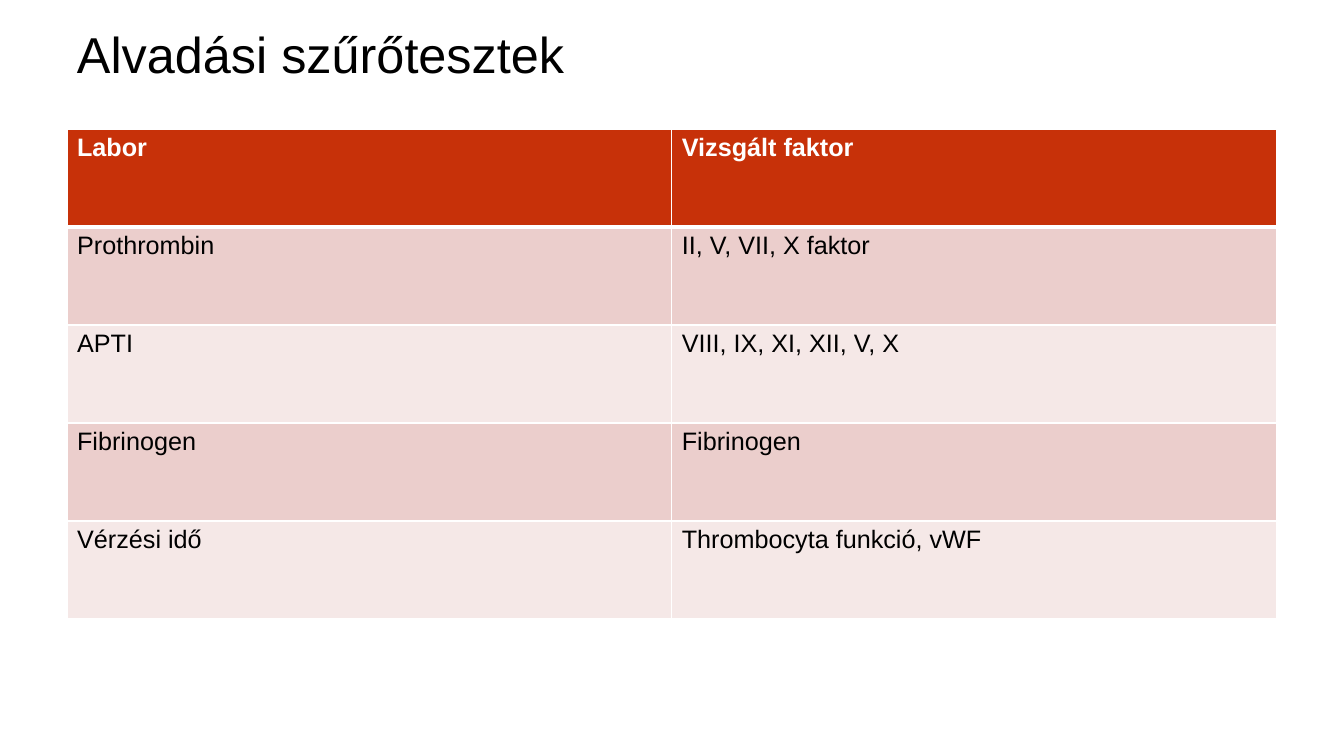
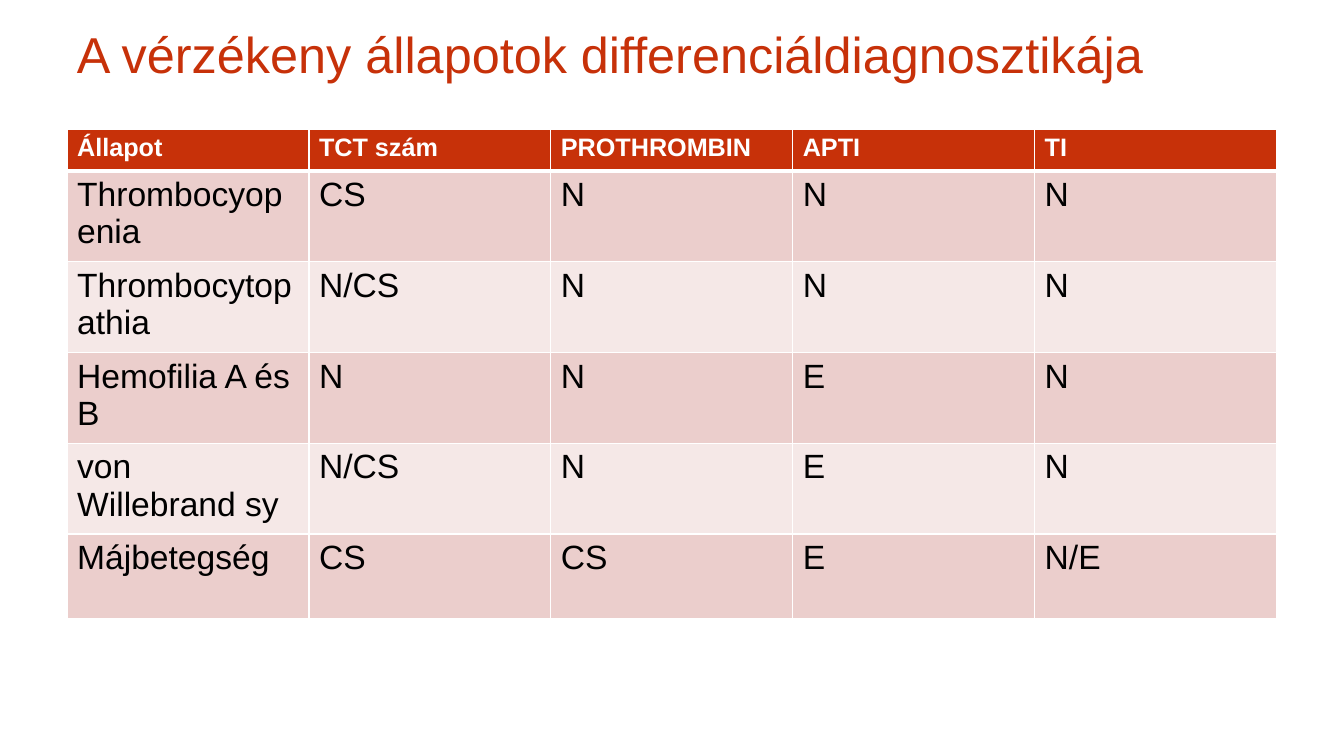
import pptx
import pptx.dml.color
import pptx.enum.text
import pptx.oxml
import pptx.oxml.ns
import pptx.util

Cm = pptx.util.Cm
Pt = pptx.util.Pt

COLORS = {
    "accent": "C73109",
    "text": "000000",
    "white": "FFFFFF",
    "band_dark": "EBCECC",
    "band_light": "F5E8E7",
}


class Deck:
    FONT = "Arial"
    LEFT, WIDTH = 1.69, 30.48
    TITLE_TOP, TITLE_HEIGHT = 0.53, 1.63
    TABLE_TOP = 3.25

    def __init__(self):
        self.prs = pptx.Presentation()
        self.prs.slide_width = Cm(33.87)
        self.prs.slide_height = Cm(19.05)
        self.s = None

    def rgb(self, color):
        return pptx.dml.color.RGBColor.from_string(COLORS[color])

    def set_text(self, tf, text, size, color, bold=False):
        tf.text = text
        for r in tf.paragraphs[0].runs:
            r.font.name = self.FONT
            r.font.size = Pt(size)
            r.font.bold = bold
            r.font.color.rgb = self.rgb(color)

    def slide(self, title, color):
        self.s = self.prs.slides.add_slide(self.prs.slide_layouts[6])
        sp = self.s.shapes.add_textbox(
            Cm(self.LEFT), Cm(self.TITLE_TOP), Cm(self.WIDTH), Cm(self.TITLE_HEIGHT))
        tf = sp.text_frame
        tf.word_wrap = True
        tf.vertical_anchor = pptx.enum.text.MSO_ANCHOR.MIDDLE
        self.set_text(tf, title, 36, color)

    def borders(self, cell, top, bottom):
        tc_pr = cell._tc.get_or_add_tcPr()
        for side, width in (("L", 1), ("R", 1), ("T", top), ("B", bottom)):
            tc_pr.append(pptx.oxml.parse_xml(
                f'<a:ln{side} {pptx.oxml.ns.nsdecls("a")} w="{Pt(width)}">'
                f'<a:solidFill><a:srgbClr val="{COLORS["white"]}"/></a:solidFill>'
                f'</a:ln{side}>'))

    def table(self, rows, header_height, row_height, body_size):
        heights = [header_height] + [row_height] * (len(rows) - 1)
        table = self.s.shapes.add_table(
            len(rows), len(rows[0]), Cm(self.LEFT), Cm(self.TABLE_TOP),
            Cm(self.WIDTH), Cm(sum(heights))).table
        for column in table.columns:
            column.width = Cm(self.WIDTH / len(rows[0]))
        for i, (values, height) in enumerate(zip(rows, heights)):
            table.rows[i].height = Cm(height)
            header = i == 0
            band = "band_dark" if i % 2 else "band_light"
            for j, text in enumerate(values):
                cell = table.cell(i, j)
                self.borders(cell, 3 if i == 1 else 1, 3 if header else 1)
                cell.fill.solid()
                cell.fill.fore_color.rgb = self.rgb("accent" if header else band)
                self.set_text(cell.text_frame, text, 18 if header else body_size,
                              "white" if header else "text", header)


def main():
    deck = Deck()

    deck.slide("Alvadási szűrőtesztek", "text")
    deck.table([
        ("Labor", "Vizsgált faktor"),
        ("Prothrombin", "II, V, VII, X faktor"),
        ("APTI", "VIII, IX, XI, XII, V, X"),
        ("Fibrinogen", "Fibrinogen"),
        ("Vérzési idő", "Thrombocyta funkció, vWF"),
    ], header_height=2.47, row_height=2.47, body_size=18)

    deck.slide("A vérzékeny állapotok differenciáldiagnosztikája", "accent")
    deck.table([
        ("Állapot", "TCT szám", "PROTHROMBIN", "APTI", "TI"),
        ("Thrombocyopenia", "CS", "N", "N", "N"),
        ("Thrombocytopathia", "N/CS", "N", "N", "N"),
        ("Hemofilia A és B", "N", "N", "E", "N"),
        ("von Willebrand sy", "N/CS", "N", "E", "N"),
        ("Májbetegség", "CS", "CS", "E", "N/E"),
    ], header_height=1.06, row_height=2.14, body_size=24)

    deck.prs.save("out.pptx")


if __name__ == "__main__":
    main()
